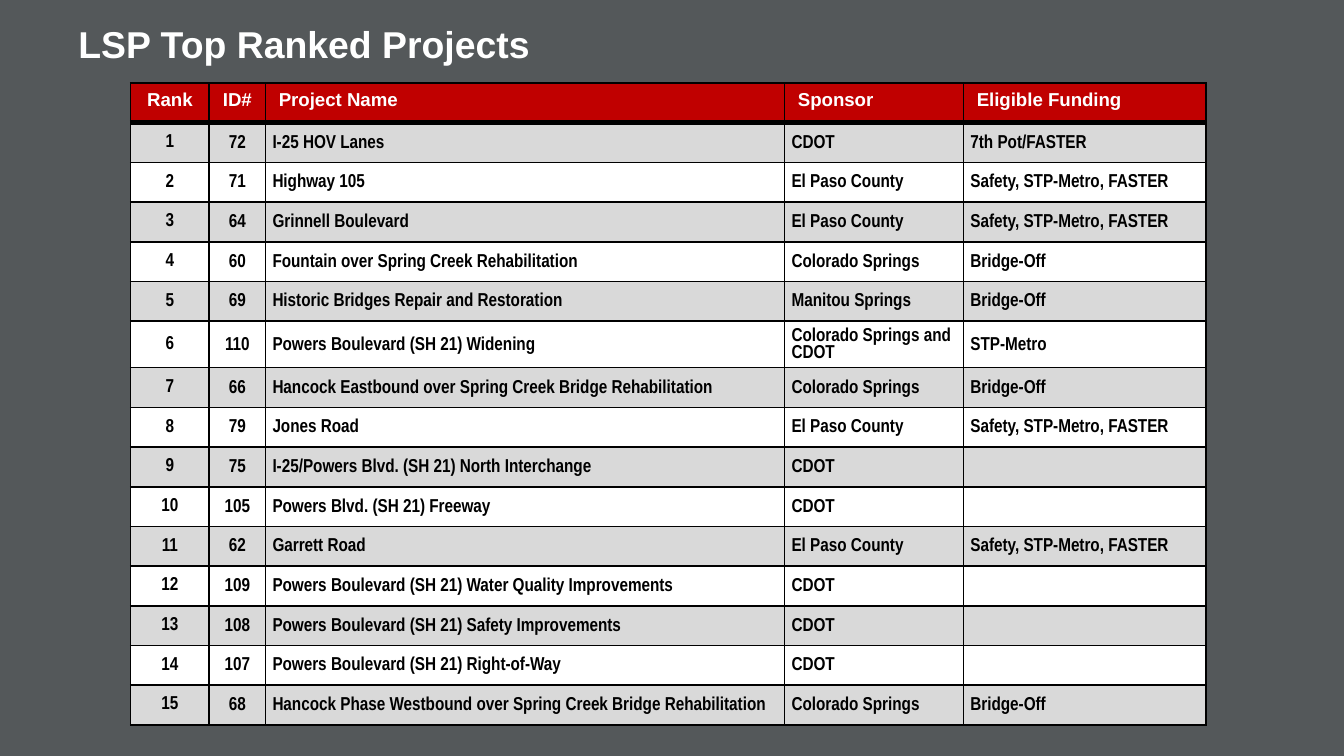
from lxml import etree
from pptx import Presentation
from pptx import util as u
from pptx.dml import color
from pptx.enum import shapes, text
from pptx.oxml import ns

HEADER = ["Rank", "ID#", "Project Name", "Sponsor", "Eligible Funding"]
METRO = "Safety, STP-Metro, FASTER"
# Projects in rank order: ID, name, sponsor, funding
PROJECTS = [
    ("72", "I-25 HOV Lanes", "CDOT", "7th Pot/FASTER"),
    ("71", "Highway 105", "El Paso County", METRO),
    ("64", "Grinnell Boulevard", "El Paso County", METRO),
    ("60", "Fountain over Spring Creek Rehabilitation", "Colorado Springs", "Bridge-Off"),
    ("69", "Historic Bridges Repair and Restoration", "Manitou Springs", "Bridge-Off"),
    ("110", "Powers Boulevard (SH 21) Widening", "Colorado Springs and CDOT", "STP-Metro"),
    ("66", "Hancock Eastbound over Spring Creek Bridge Rehabilitation",
     "Colorado Springs", "Bridge-Off"),
    ("79", "Jones Road", "El Paso County", METRO),
    ("75", "I-25/Powers Blvd. (SH 21) North Interchange", "CDOT", ""),
    ("105", "Powers Blvd. (SH 21) Freeway", "CDOT", ""),
    ("62", "Garrett Road", "El Paso County", METRO),
    ("109", "Powers Boulevard (SH 21) Water Quality Improvements", "CDOT", ""),
    ("108", "Powers Boulevard (SH 21) Safety Improvements", "CDOT", ""),
    ("107", "Powers Boulevard (SH 21) Right-of-Way", "CDOT", ""),
    ("68", "Hancock Phase Westbound over Spring Creek Bridge Rehabilitation",
     "Colorado Springs", "Bridge-Off"),
]
COLUMN_WIDTHS = [1.48, 1.07, 9.81, 3.38, 4.58]
ROW_HEIGHT, TALL_ROW, TALL_HEIGHT = 0.75, 6, 0.88


def rgb(value):
    return color.RGBColor.from_string(value)


class ProjectSlide:
    white, black, slate, red, gray = "FFFFFF", "000000", "54585A", "C00000", "D9D9D9"
    heading_font, body_font = "Arial", "Arial Narrow"
    title_size, table_size = 20, 10

    def __init__(self, deck):
        self.page = deck.slides.add_slide(deck.slide_layouts[5])

    def add_span(self, para, words, size, font, ink):
        span = para.add_run()
        span.text = words
        span.font.size = u.Pt(size)
        span.font.name = font
        span.font.bold = True
        span.font.color.rgb = rgb(ink)

    def add_backdrop(self, width, height):
        box = self.page.shapes.add_shape(shapes.MSO_SHAPE.RECTANGLE, 0, 0, width, height)
        box.shadow.inherit = False
        box.fill.solid()
        box.fill.fore_color.rgb = rgb(self.slate)
        box.line.fill.background()
        # Send behind the title placeholder
        self.page.shapes.title.element.addprevious(box.element)

    def add_title(self, words, left, top, width, height):
        box = self.page.shapes.title
        box.left, box.top, box.width, box.height = map(u.Cm, (left, top, width, height))
        frame = box.text_frame
        frame.word_wrap = True
        frame.auto_size = text.MSO_AUTO_SIZE.NONE
        frame.vertical_anchor = text.MSO_ANCHOR.BOTTOM
        frame.margin_left = frame.margin_right = u.Cm(0.64)
        frame.margin_top = frame.margin_bottom = u.Cm(0.13)
        para = frame.paragraphs[0]
        para.alignment = text.PP_ALIGN.LEFT
        para.line_spacing = u.Pt(26)
        self.add_span(para, words, self.title_size, self.heading_font, self.white)

    def add_borders(self, cell, **widths):
        props = cell._tc.get_or_add_tcPr()
        for index, (side, width) in enumerate(widths.items()):
            line = etree.Element(ns.qn(f"a:{side}"), w=str(u.Pt(width)))
            fill = etree.SubElement(line, ns.qn("a:solidFill"))
            etree.SubElement(fill, ns.qn("a:srgbClr"), val=self.black)
            props.insert(index, line)

    def add_cell(self, cell, words, row, column):
        is_header = row == 0
        cell.fill.solid()
        banding = self.gray if row % 2 else self.white
        cell.fill.fore_color.rgb = rgb(self.red if is_header else banding)
        self.add_borders(cell, lnL=1, lnR=1, lnT=3 if row == 1 else 1,
                         lnB=3 if is_header else 1)
        if not is_header:
            cell.vertical_anchor = text.MSO_ANCHOR.MIDDLE
        if is_header or column == 0:
            cell.margin_left = cell.margin_right = u.Cm(0.25)
            cell.margin_top = cell.margin_bottom = u.Cm(0.13)
        else:
            cell.margin_left = u.Cm(0.03 if column == 1 else 0.13)
            cell.margin_right = cell.margin_top = u.Cm(0.03)
            cell.margin_bottom = 0
        para = cell.text_frame.paragraphs[0]
        para.alignment = text.PP_ALIGN.CENTER if column < 2 else text.PP_ALIGN.LEFT
        if words:
            self.add_span(para, words, self.table_size,
                          self.heading_font if is_header else self.body_font,
                          self.white if is_header else self.black)
        else:
            # Keep an empty cell from growing to the default text size
            etree.SubElement(para._p, ns.qn("a:endParaRPr"), sz=str(self.table_size * 100))

    def add_table(self, rows, left, top):
        heights = [TALL_HEIGHT if i == TALL_ROW else ROW_HEIGHT for i in range(len(rows))]
        frame = self.page.shapes.add_table(
            len(rows), len(COLUMN_WIDTHS), u.Cm(left), u.Cm(top),
            u.Cm(sum(COLUMN_WIDTHS)), u.Cm(sum(heights)))
        table = frame.table
        for column, width in zip(table.columns, COLUMN_WIDTHS):
            column.width = u.Cm(width)
        for i, (values, height) in enumerate(zip(rows, heights)):
            table.rows[i].height = u.Cm(height)
            for j, words in enumerate(values):
                self.add_cell(table.cell(i, j), words, i, j)


def main():
    deck = Presentation()
    deck.slide_width, deck.slide_height = u.Cm(25.4), u.Cm(14.29)
    slide = ProjectSlide(deck)

    # Backdrop and title
    slide.add_backdrop(deck.slide_width, deck.slide_height)
    slide.add_title("LSP Top Ranked Projects", 0.84, 0.3, 23.14, 1.07)

    # Ranking table
    ranked = [(str(rank), *project) for rank, project in enumerate(PROJECTS, 1)]
    slide.add_table([HEADER, *ranked], 2.47, 1.57)

    deck.save("out.pptx")


if __name__ == "__main__":
    main()
